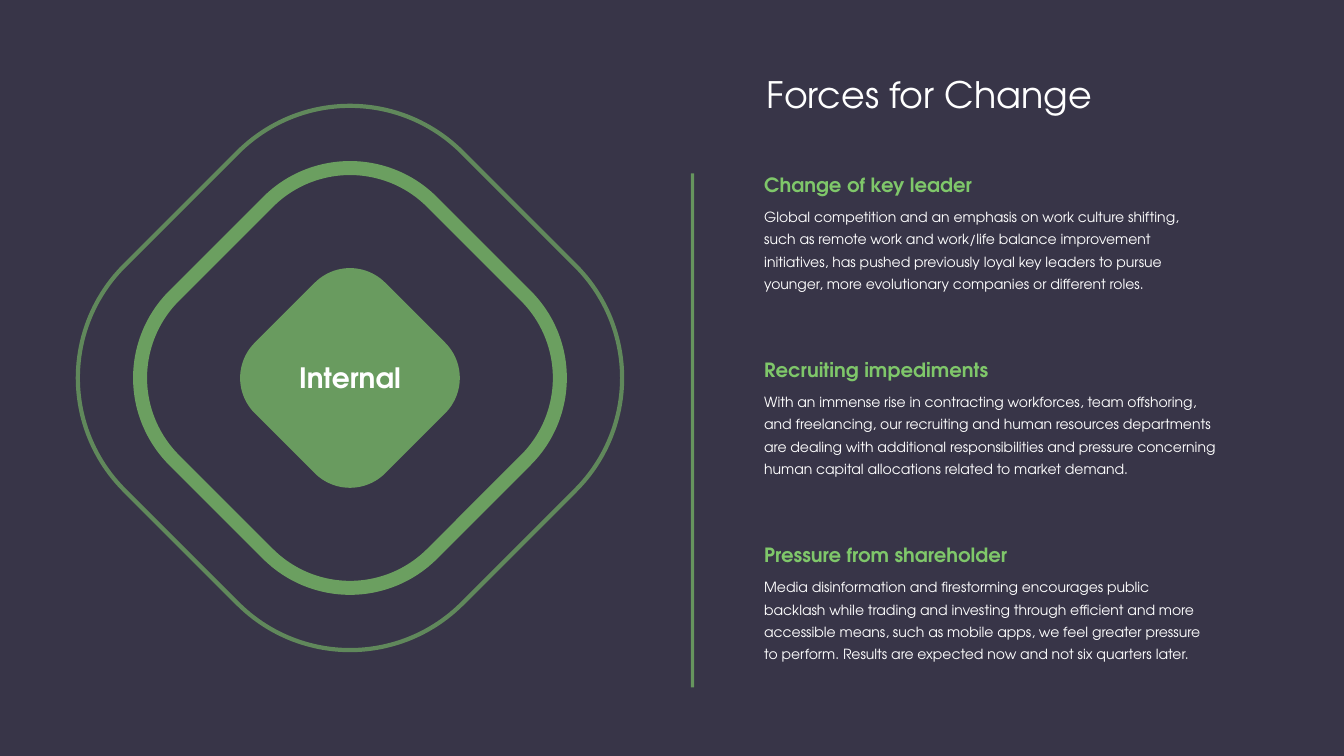
"""Build the "Forces for Change" slide with its diamond figure and three internal forces."""
from lxml import etree
from pptx import Presentation
from pptx import util as u
from pptx.dml.color import RGBColor
from pptx.enum import shapes, text
from pptx.oxml.ns import qn

NIGHT = RGBColor(0x38, 0x35, 0x48)
GREEN = RGBColor(0x7F, 0xC7, 0x6A)
WHITE = RGBColor(0xFF, 0xFF, 0xFF)
FONT = "TeX Gyre Adventor"

FORCES = [
    ("Change of key leader", 314,
     "Global competition and an emphasis on work culture shifting, such as remote work and "
     "work/life balance improvement initiatives, has pushed previously loyal key leaders to "
     "pursue younger, more evolutionary companies or different roles."),
    ("Recruiting impediments", 340.6,
     "With an immense rise in contracting workforces, team offshoring, and freelancing, our "
     "recruiting and human resources departments are dealing with additional responsibilities "
     "and pressure concerning human capital allocations related to market demand."),
    ("Pressure from shareholder", 333.4,
     "Media disinformation and firestorming encourages public backlash while trading and "
     "investing through efficient and more accessible means, such as mobile apps, we feel "
     "greater pressure to perform. Results are expected now and not six quarters later."),
]


def write(frame, words, size, color=WHITE, bold=False, align=text.PP_ALIGN.LEFT,
          spacing=None, wrap=True):
    """Fill a text frame with one formatted paragraph."""
    frame.word_wrap = wrap
    frame.auto_size = text.MSO_AUTO_SIZE.NONE
    frame.vertical_anchor = text.MSO_ANCHOR.TOP
    line = frame.paragraphs[0]
    line.alignment = align
    if spacing:
        line.line_spacing = u.Pt(spacing)
    run = line.add_run()
    run.text = words
    run.font.name = FONT
    run.font.size = u.Pt(size)
    run.font.bold = bold
    run.font.color.rgb = color


class ForcesSlide:
    """Holds the style and the current slide."""

    def __init__(self, deck):
        self.slide = deck.slides.add_slide(deck.slide_layouts[5])
        self.slide.background.fill.solid()
        self.slide.background.fill.fore_color.rgb = NIGHT

    def title(self, words, left, top, width, height):
        heading = self.slide.shapes.title
        heading.left, heading.top = u.Pt(left), u.Pt(top)
        heading.width, heading.height = u.Pt(width), u.Pt(height)
        write(heading.text_frame, words, 26, align=text.PP_ALIGN.CENTER, wrap=False)

    def label(self, words, left, top, width, height, **style):
        box = self.slide.shapes.add_textbox(u.Pt(left), u.Pt(top), u.Pt(width), u.Pt(height))
        write(box.text_frame, words, **style)

    def block(self, kind, left, top, width, height, opacity, stroke=0):
        """Add a green shape, outlined if stroke is given and filled otherwise."""
        block = self.slide.shapes.add_shape(
            kind, u.Pt(left), u.Pt(top), u.Pt(width), u.Pt(height))
        block.shadow.inherit = False
        painted, bare = (block.line.fill, block.fill) if stroke else (block.fill, block.line.fill)
        painted.solid()
        painted.fore_color.rgb = GREEN
        bare.background()
        if stroke:
            block.line.width = u.Pt(stroke)
        for tint in block._element.spPr.iter(qn("a:srgbClr")):
            etree.SubElement(tint, qn("a:alpha"), val=str(opacity * 1000))
        return block

    def diamond(self, center_x, center_y, side, corner, opacity, stroke=0):
        diamond = self.block(shapes.MSO_SHAPE.ROUNDED_RECTANGLE, center_x - side / 2,
                             center_y - side / 2, side, side, opacity, stroke)
        diamond.adjustments[0] = corner
        diamond.rotation = 45

    def force(self, name, detail, left, top, width):
        self.label(name, left, top, 314, 23.8, size=14, color=GREEN, bold=True, spacing=16)
        self.label(detail, left, top + 20.4, width, 70, size=10, spacing=16)


def main():
    deck = Presentation()
    deck.slide_width, deck.slide_height = u.Pt(960), u.Pt(540)
    page = ForcesSlide(deck)
    page.title("Forces for Change", 538.6, 48.2, 250.6, 38.9)
    for side, corner, opacity, stroke in [(260.6, 0.318, 72, 10), (341.3, 0.332, 56, 3),
                                          (131.8, 0.27, 70, 0)]:
        page.diamond(250, 270, side, corner, opacity, stroke)
    page.label("Internal", 206, 254, 88, 32, size=20, bold=True,
               align=text.PP_ALIGN.CENTER, wrap=False)
    page.block(shapes.MSO_SHAPE.RECTANGLE, 493.6, 123.8, 2.2, 367.2, 66)
    for row, (name, width, detail) in enumerate(FORCES):
        page.force(name, detail, 538.8, 121 + 132.2 * row, width)
    deck.save("out.pptx")


if __name__ == "__main__":
    main()
